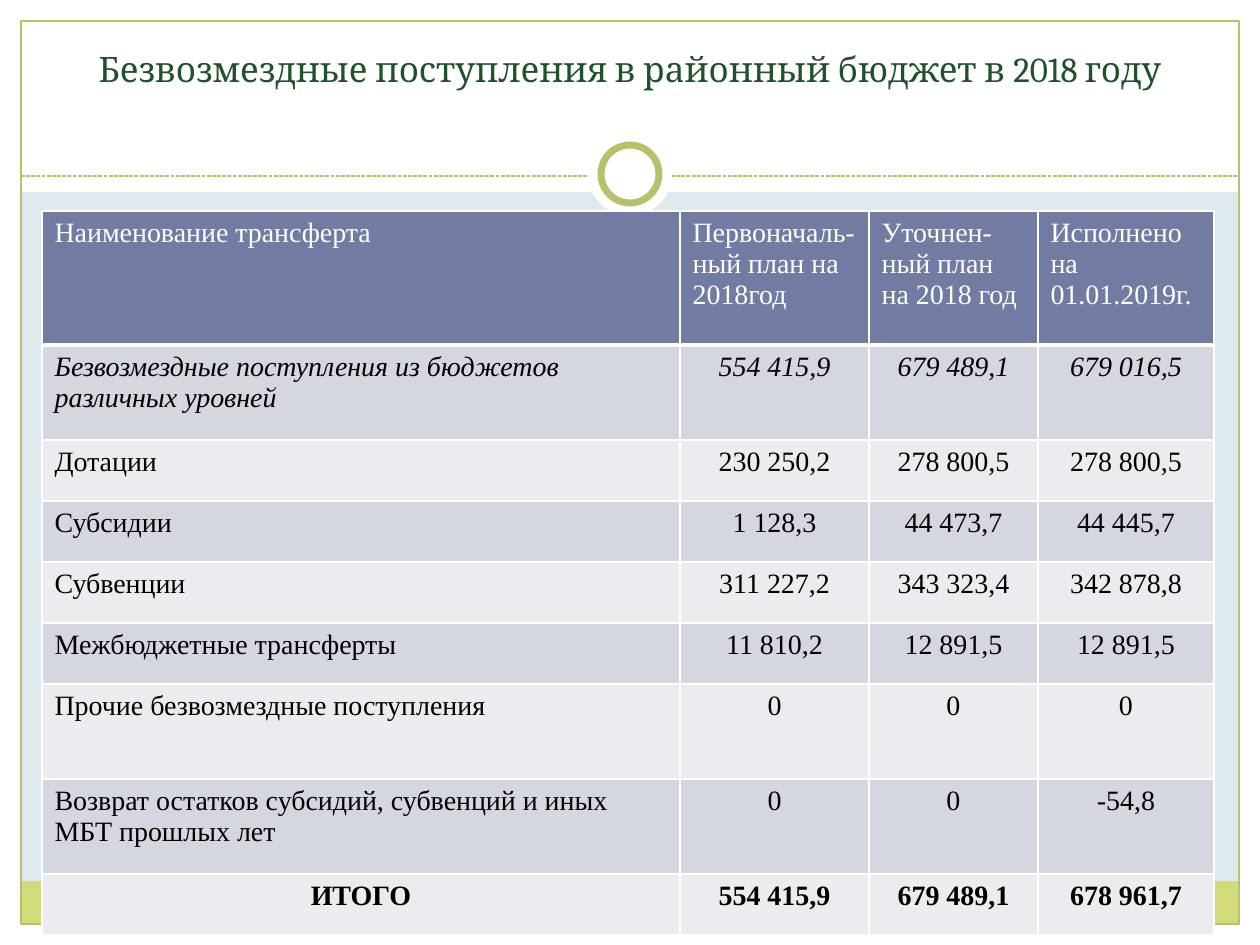
from lxml.etree import SubElement
from pptx import Presentation
from pptx.dml.color import RGBColor
from pptx.enum.dml import MSO_LINE
from pptx.enum.shapes import MSO_CONNECTOR, MSO_SHAPE
from pptx.enum.text import MSO_ANCHOR, PP_ALIGN
from pptx.oxml import parse_xml
from pptx.oxml.ns import nsdecls, qn
from pptx.util import Emu, Pt

COLORS = {
    "background": "DDE9EC", "white": "FFFFFF", "band": "D2DA7A", "accent": "B9C06C",
    "title": "1F512B", "header": "727CA3", "odd": "D5D7E0", "even": "EBECF0", "text": "000000",
}
PAGE_BOX = (0, 0, 1260, 945)
TITLE_BOX = (42, 31, 1176, 105)
TABLE_BOX = (42, 211, 1172, 724)
COLUMN_WIDTHS = (638, 189, 169, 176)
ROW_HEIGHTS = (134, 95, 61, 61, 61, 61, 95, 95, 61)
ROWS = (
    ("Наименование трансферта", "Первоначаль-ный план на 2018год",
     "Уточнен-ный план на 2018 год", "Исполнено на 01.01.2019г."),
    ("Безвозмездные поступления из бюджетов различных уровней",
     "554 415,9", "679 489,1", "679 016,5"),
    ("Дотации", "230 250,2", "278 800,5", "278 800,5"),
    ("Субсидии", "1 128,3", "44 473,7", "44 445,7"),
    ("Субвенции", "311 227,2", "343 323,4", "342 878,8"),
    ("Межбюджетные трансферты", "11 810,2", "12 891,5", "12 891,5"),
    ("Прочие безвозмездные поступления", "0", "0", "0"),
    ("Возврат остатков субсидий, субвенций и иных МБТ прошлых лет", "0", "0", "-54,8"),
    ("ИТОГО", "554 415,9", "679 489,1", "678 961,7"),
)


def px(length):
    """Turn pixels into EMU."""
    return Emu(round(length * 914400 / 126))


def color(name):
    """Look up a named colour."""
    return RGBColor.from_string(COLORS[name])


def write(para, text, align, tint, **formats):
    """Write one formatted span into a paragraph."""
    para.alignment = align
    span = para.add_run()
    span.text = text
    span.font.color.rgb = color(tint)
    for name, value in formats.items():
        setattr(span.font, name, value)


def add_plain(page, kind, box, fill=None, line=None, width=0.75):
    """Add a preset shape without shadow."""
    shape = page.shapes.add_shape(kind, *map(px, box))
    shape.shadow.inherit = False
    if fill:
        shape.fill.solid()
        shape.fill.fore_color.rgb = color(fill)
    else:
        shape.fill.background()
    if line:
        shape.line.color.rgb = color(line)
        shape.line.width = Pt(width)
    else:
        shape.line.fill.background()


def add_frame(page, box):
    """Draw the margins, footer band, outline, divider and ring."""
    left, top, width, height = box
    edge = 21
    right, bottom = left + width - edge, top + height - edge
    for strip in (
        (left, bottom, width, edge),
        (left, top, width, 192),
        (left, top, edge, height),
        (right, top, edge, height),
    ):
        add_plain(page, MSO_SHAPE.RECTANGLE, strip, "white")
    inner = width - 2 * edge
    add_plain(page, MSO_SHAPE.RECTANGLE, (left + edge, bottom - 43, inner, 43), "band")
    add_plain(page, MSO_SHAPE.RECTANGLE,
              (left + edge, top + edge, inner, height - 2 * edge), line="accent")

    level = px(top + 176)
    divider = page.shapes.add_connector(
        MSO_CONNECTOR.STRAIGHT, px(left + edge), level, px(right), level)
    for name, value in {"width": Pt(0.75), "dash_style": MSO_LINE.SQUARE_DOT}.items():
        setattr(divider.line, name, value)
    divider.line.color.rgb = color("accent")
    SubElement(divider._element.spPr, qn("a:effectLst"))

    middle, center = left + width // 2, top + 174
    for size, line in ((84, None), (58, "accent")):
        ring = (middle - size // 2, center - size // 2, size, size)
        add_plain(page, MSO_SHAPE.OVAL, ring, "white", line, 4)


def add_title(page, box):
    """Place the slide title."""
    frame = page.shapes.add_textbox(*map(px, box)).text_frame
    formats = {"word_wrap": True, "vertical_anchor": MSO_ANCHOR.BOTTOM, "margin_bottom": px(47)}
    for name, value in formats.items():
        setattr(frame, name, value)
    write(frame.paragraphs[0], "Безвозмездные поступления в районный бюджет в 2018 году",
          PP_ALIGN.CENTER, "title", name="Cambria", size=Pt(20))


def set_borders(cell, widths):
    """Give a cell white borders, in the order left, right, top, bottom."""
    properties = cell._tc.get_or_add_tcPr()
    for index, (side, width) in enumerate(zip("LRTB", widths)):
        properties.insert(index, parse_xml(
            f'<a:ln{side} {nsdecls("a")} w="{Pt(width)}"><a:solidFill>'
            f'<a:srgbClr val="{COLORS["white"]}"/></a:solidFill></a:ln{side}>'))


def add_transfers(page, box):
    """Build the table of transfers."""
    table = page.shapes.add_table(len(ROWS), len(COLUMN_WIDTHS), *map(px, box)).table
    for column, width in zip(table.columns, COLUMN_WIDTHS):
        column.width = px(width)
    last = len(ROWS) - 1
    for r, (row, height, texts) in enumerate(zip(table.rows, ROW_HEIGHTS, ROWS)):
        row.height = px(height)
        fill = "header" if r == 0 else "odd" if r % 2 else "even"
        for c, (cell, text) in enumerate(zip(row.cells, texts)):
            cell.fill.solid()
            cell.fill.fore_color.rgb = color(fill)
            set_borders(cell, (1, 1, 3 if r == 1 else 1, 3 if r == 0 else 1))
            centered = r == last or (r > 0 and c > 0)
            write(cell.text_frame.paragraphs[0], text,
                  PP_ALIGN.CENTER if centered else PP_ALIGN.LEFT,
                  "text" if r else "white", name="Times New Roman", size=Pt(16),
                  bold=r == last, italic=r == 1)


def main():
    """Build and save the deck."""
    deck = Presentation()
    deck.slide_width, deck.slide_height = map(px, PAGE_BOX[2:])
    page = deck.slides.add_slide(deck.slide_layouts[6])
    page.background.fill.solid()
    page.background.fill.fore_color.rgb = color("background")
    add_frame(page, PAGE_BOX)
    add_title(page, TITLE_BOX)
    add_transfers(page, TABLE_BOX)
    deck.save("out.pptx")


if __name__ == "__main__":
    main()
